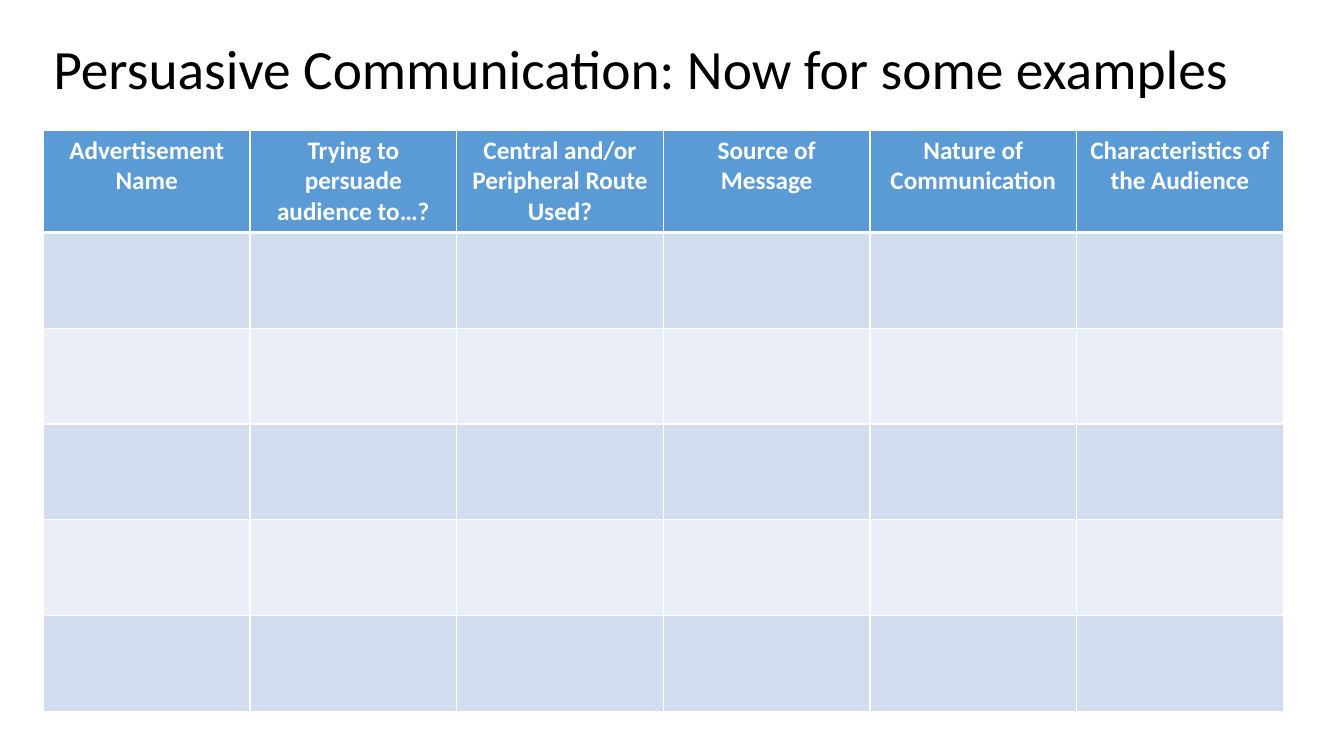
from lxml import etree
from pptx import Presentation, util as u
from pptx.dml.color import RGBColor
from pptx.enum import text
from pptx.oxml import ns

COLORS = {
    "ink": "000000",
    "white": "FFFFFF",
    "header": "5B9BD5",
    "band_dark": "D2DEEF",
    "band_light": "EAEFF7",
}
QUESTIONS = [
    "Advertisement Name",
    "Trying to persuade audience to…?",
    "Central and/or Peripheral Route Used?",
    "Source of Message",
    "Nature of Communication",
    "Characteristics of the Audience",
]
EXAMPLE_ROWS = 5


class SlideBuilder:
    font = "Calibri"

    def __init__(self, slide):
        self.slide = slide

    def color(self, name):
        return RGBColor.from_string(COLORS[name])

    def add_words(self, paragraph, words, size, color, bold=False):
        run = paragraph.add_run()
        run.text = words
        run.font.name = self.font
        run.font.size = u.Pt(size)
        run.font.bold = bold
        run.font.color.rgb = self.color(color)

    def title(self, words, left, top, width, height):
        heading = self.slide.shapes.title
        heading.left, heading.top = u.Inches(left), u.Inches(top)
        heading.width, heading.height = u.Inches(width), u.Inches(height)
        frame = heading.text_frame
        frame.word_wrap = True
        frame.auto_size = text.MSO_AUTO_SIZE.NONE
        frame.vertical_anchor = text.MSO_ANCHOR.MIDDLE
        line = frame.paragraphs[0]
        line.alignment = text.PP_ALIGN.LEFT
        line.line_spacing = 0.9
        self.add_words(line, words, 39.6, "ink")

    def borders(self, cell, widths):
        properties = cell._tc.get_or_add_tcPr()
        for position, (side, width) in enumerate(widths.items()):
            edge = etree.Element(ns.qn(f"a:ln{side}"), w=str(u.Pt(width)))
            fill = etree.SubElement(edge, ns.qn("a:solidFill"))
            etree.SubElement(fill, ns.qn("a:srgbClr"), val=COLORS["white"])
            properties.insert(position, edge)

    def table(self, headings, blank_rows, left, top, column_width, header_height, row_height):
        row_count, column_count = blank_rows + 1, len(headings)
        grid = self.slide.shapes.add_table(
            row_count, column_count, u.Inches(left), u.Inches(top),
            u.Inches(column_width * column_count),
            u.Inches(header_height + row_height * blank_rows),
        ).table
        for column in grid.columns:
            column.width = u.Inches(column_width)
        for number, row in enumerate(grid.rows):
            row.height = u.Inches(row_height if number else header_height)
            band = ("band_dark" if number % 2 else "band_light") if number else "header"
            widths = {"L": 1, "R": 1, "T": 3 if number == 1 else 1, "B": 1 if number else 3}
            for cell in row.cells:
                cell.fill.solid()
                cell.fill.fore_color.rgb = self.color(band)
                self.borders(cell, widths)
        for cell, words in zip(grid.rows[0].cells, headings):
            line = cell.text_frame.paragraphs[0]
            line.alignment = text.PP_ALIGN.CENTER
            self.add_words(line, words, 18, "white", bold=True)


def main():
    deck = Presentation()
    deck.slide_width, deck.slide_height = u.Inches(13.33), u.Inches(7.5)
    builder = SlideBuilder(deck.slides.add_slide(deck.slide_layouts[5]))
    builder.title("Persuasive Communication: Now for some examples", 0.43, 0.3, 12.42, 0.82)
    builder.table(QUESTIONS, EXAMPLE_ROWS, 0.43, 1.29, 2.05, 0.94, 0.95)
    deck.save("out.pptx")


if __name__ == "__main__":
    main()
